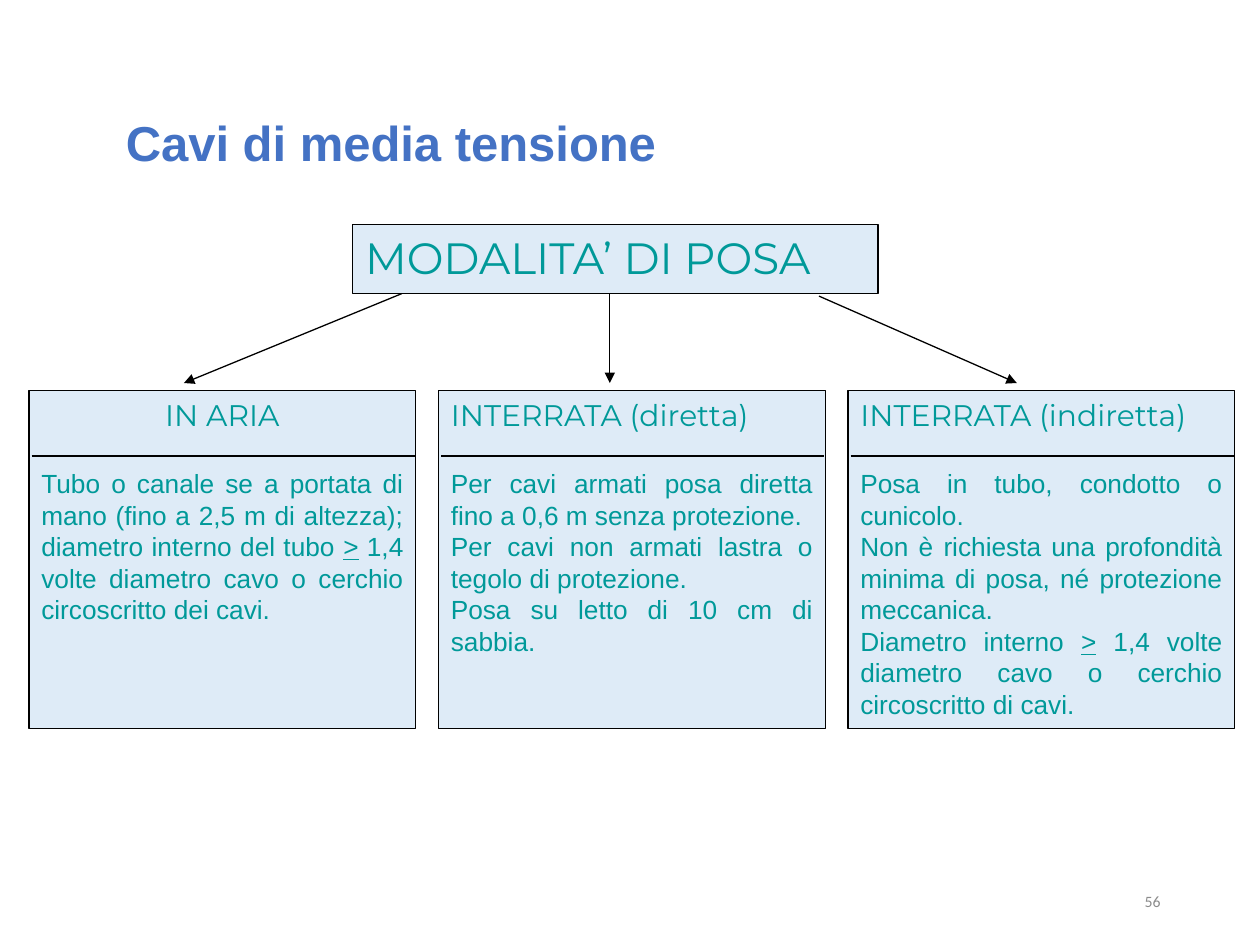
from typing import NamedTuple

from lxml.etree import SubElement
from pptx import Presentation
from pptx.dml.color import RGBColor
from pptx.enum.shapes import MSO_CONNECTOR, MSO_SHAPE
from pptx.enum.text import MSO_ANCHOR, PP_ALIGN
from pptx.oxml.ns import qn
from pptx.util import Inches, Pt

COLORS = {
    "title": "4472C4",
    "text": "009999",
    "panel": "DEEBF7",
    "line": "000000",
    "number": "8C8C8C",
}


class Method(NamedTuple):
    heading: str
    heading_align: PP_ALIGN
    rules: list[str]


class Line(NamedTuple):
    start: tuple[float, float]
    end: tuple[float, float]
    width: float = 0.75
    arrow: bool = True


METHODS = [
    Method("IN ARIA", PP_ALIGN.CENTER, [
        "Tubo o canale se a portata di mano (fino a 2,5 m di altezza); diametro interno "
        "del tubo > 1,4 volte diametro cavo o cerchio circoscritto dei cavi.",
    ]),
    Method("INTERRATA (diretta)", PP_ALIGN.LEFT, [
        "Per cavi armati posa diretta fino a 0,6 m senza protezione.",
        "Per cavi non armati lastra o tegolo di protezione.",
        "Posa su letto di 10 cm di sabbia.",
    ]),
    Method("INTERRATA (indiretta)", PP_ALIGN.LEFT, [
        "Posa in tubo, condotto o cunicolo.",
        "Non è richiesta una profondità minima di posa, né protezione meccanica.",
        "Diametro interno > 1,4 volte diametro cavo o cerchio circoscritto di cavi.",
    ]),
]
ARROWS = [
    Line((3.19, 2.33), (1.46, 3.04)),
    Line((4.84, 2.33), (4.84, 3.04)),
    Line((6.5, 2.35), (8.07, 3.04)),
]
PANEL_LEFT, PANEL_TOP, PANEL_WIDTH, PANEL_HEIGHT = 0.23, 3.1, 3.07, 2.68
PANEL_STEP = 3.25
DIVIDER_TOP = 3.62


def style(paragraph, size: float, face: str, color: str, align=PP_ALIGN.LEFT, bold=False) -> None:
    """Set the font and alignment of a whole paragraph."""
    paragraph.alignment = align
    font = paragraph.font
    font.size, font.name, font.bold = Pt(size), face, bold
    font.color.rgb = RGBColor.from_string(COLORS[color])


def add_label(slide, left: float, top: float, width: float, height: float, text: str):
    """Add a wrapping text box and return its text frame."""
    frame = slide.shapes.add_textbox(
        Inches(left), Inches(top), Inches(width), Inches(height)).text_frame
    frame.word_wrap = True
    frame.text = text
    return frame


def add_panel(slide, left: float, top: float, width: float, height: float):
    """Add a bordered pale rectangle and return its text frame."""
    panel = slide.shapes.add_shape(
        MSO_SHAPE.RECTANGLE, Inches(left), Inches(top), Inches(width), Inches(height))
    panel.shadow.inherit = False
    panel.fill.solid()
    panel.fill.fore_color.rgb = RGBColor.from_string(COLORS["panel"])
    panel.line.color.rgb = RGBColor.from_string(COLORS["line"])
    panel.line.width = Pt(0.75)
    frame = panel.text_frame
    frame.word_wrap = True
    frame.vertical_anchor = MSO_ANCHOR.TOP
    return frame


def add_line(slide, line: Line) -> None:
    """Draw a straight line, with an arrowhead at its end if asked."""
    connector = slide.shapes.add_connector(
        MSO_CONNECTOR.STRAIGHT, *(Inches(value) for value in line.start + line.end))
    connector.line.color.rgb = RGBColor.from_string(COLORS["line"])
    connector.line.width = Pt(line.width)
    if line.arrow:
        SubElement(connector.line._get_or_add_ln(), qn("a:tailEnd"), type="triangle")
    SubElement(connector._element.spPr, qn("a:effectLst"))


def add_rule(frame, rule: str):
    """Add a justified paragraph whose greater-than sign is underlined."""
    paragraph = frame.add_paragraph()
    before, sign, after = rule.partition(">")
    for part in filter(None, (before, sign, after)):
        run = paragraph.add_run()
        run.text = part
        if part == ">":
            run.font.underline = True
    style(paragraph, 15, "Arial", "text", PP_ALIGN.JUSTIFY)
    paragraph.line_spacing = Pt(18)
    return paragraph


def add_method(slide, left: float, method: Method) -> None:
    """Draw one laying method with its heading and rules."""
    frame = add_panel(slide, left, PANEL_TOP, PANEL_WIDTH, PANEL_HEIGHT)
    heading = frame.paragraphs[0]
    heading.text = method.heading
    style(heading, 17, "Montserrat", "text", method.heading_align)
    paragraphs = [add_rule(frame, rule) for rule in method.rules]
    paragraphs[0].space_before = Pt(20)


def main() -> None:
    """Build the slide and save it."""
    presentation = Presentation()
    presentation.slide_width, presentation.slide_height = Inches(10), Inches(7.5)
    slide = presentation.slides.add_slide(presentation.slide_layouts[6])

    title = add_label(slide, 0.9, 0.84, 5.99, 0.57, "Cavi di media tensione")
    style(title.paragraphs[0], 28, "Arial", "title", bold=True)

    topic = add_panel(slide, 2.8, 1.78, 4.17, 0.55)
    topic.text = "MODALITA’ DI POSA"
    style(topic.paragraphs[0], 25, "Montserrat", "text")

    for arrow in ARROWS:
        add_line(slide, arrow)
    for index, method in enumerate(METHODS):
        left = PANEL_LEFT + index * PANEL_STEP
        add_method(slide, left, method)
        add_line(slide, Line((left + 0.02, DIVIDER_TOP), (left + PANEL_WIDTH - 0.01, DIVIDER_TOP),
                             width=1, arrow=False))

    number = add_label(slide, 7.06, 6.95, 2.25, 0.4, "56")
    number.vertical_anchor = MSO_ANCHOR.MIDDLE
    style(number.paragraphs[0], 9, "Calibri", "number", PP_ALIGN.RIGHT)

    presentation.save("out.pptx")


if __name__ == "__main__":
    main()
